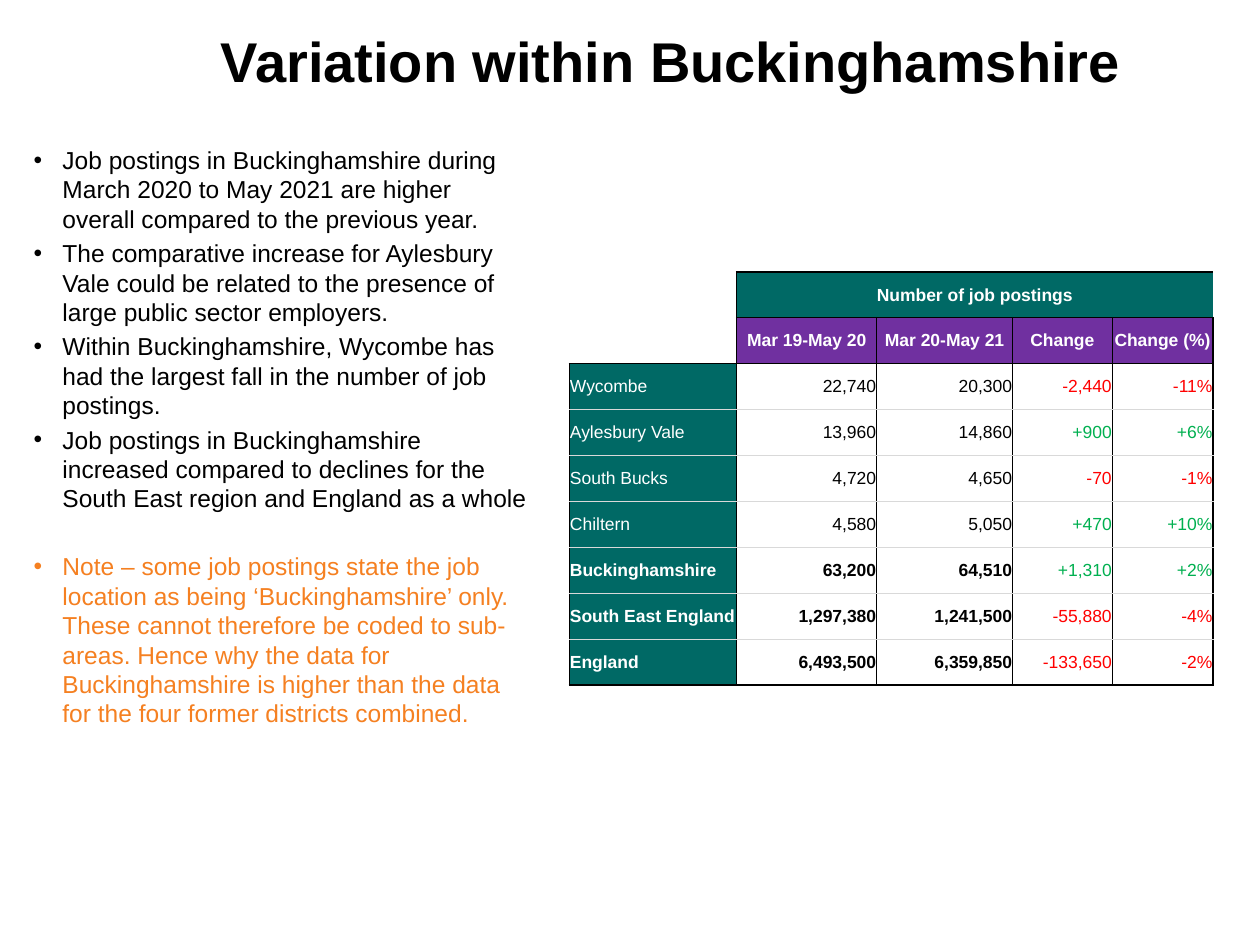
from lxml.etree import SubElement
from pptx import Presentation
from pptx.dml.color import RGBColor
from pptx.enum.text import MSO_ANCHOR, PP_ALIGN
from pptx.oxml.ns import qn
from pptx.util import Cm, Pt

COLORS = {"black": "000000", "white": "FFFFFF", "teal": "006965", "purple": "7030A0",
          "orange": "F58021", "red": "FF0000", "green": "00B050", "grey": "D9D9D9"}


def style_text(p, size, color, bold=False):
    for r in p.runs:
        r.font.name = "Arial"
        r.font.size = Pt(size)
        r.font.bold = bold
        r.font.color.rgb = RGBColor.from_string(COLORS[color])


def set_border(cell, pos, tag, line):
    """Draw one cell side; line is (color, points) or None for no line."""
    color, width = line or (None, 0)
    tcPr = cell._tc.get_or_add_tcPr()
    ln = SubElement(tcPr, qn(f"a:{tag}"), w=str(Pt(width)))
    if line:
        fill = SubElement(ln, qn("a:solidFill"))
        SubElement(fill, qn("a:srgbClr"), val=COLORS[color])
    else:
        SubElement(ln, qn("a:noFill"))
    tcPr.insert(pos, ln)


prs = Presentation()
prs.slide_width, prs.slide_height = Cm(25.4), Cm(19.05)
s = prs.slides.add_slide(prs.slide_layouts[5])

# Title
title = s.shapes.title
title.left, title.top, title.width, title.height = Cm(2.1), Cm(-0.38), Cm(22.86), Cm(3.18)
tf = title.text_frame
tf.text = "Variation within Buckinghamshire"
tf.vertical_anchor = MSO_ANCHOR.MIDDLE
tf.paragraphs[0].alignment = PP_ALIGN.CENTER
style_text(tf.paragraphs[0], 32, "black", True)

# Bulleted findings: text, colour, space before
findings = [
    ("Job postings in Buckinghamshire during March 2020 to May 2021 are higher overall "
     "compared to the previous year.", "black", 0),
    ("The comparative increase for Aylesbury Vale could be related to the presence of "
     "large public sector employers.", "black", 2.8),
    ("Within Buckinghamshire, Wycombe has had the largest fall in the number of job "
     "postings.", "black", 2.8),
    ("Job postings in Buckinghamshire increased compared to declines for the South East "
     "region and England as a whole", "black", 2.8),
    ("Note – some job postings state the job location as being ‘Buckinghamshire’ only. "
     "These cannot therefore be coded to sub-areas. Hence why the data for "
     "Buckinghamshire is higher than the data for the four former districts combined.",
     "orange", 22),
]
tf = s.shapes.add_textbox(Cm(0.43), Cm(2.8), Cm(10.48), Cm(13.08)).text_frame
tf.word_wrap = True
for i, (text, color, gap) in enumerate(findings):
    p = tf.add_paragraph() if i else tf.paragraphs[0]
    p.text = text
    p.line_spacing = Pt(16.8)
    p.space_before = Pt(gap)
    pPr = p._p.get_or_add_pPr()
    pPr.set("marL", str(Cm(0.58)))
    pPr.set("indent", str(-Cm(0.58)))
    SubElement(pPr, qn("a:buFont"), typeface="Arial")
    SubElement(pPr, qn("a:buChar"), char="•")
    style_text(p, 14, color)

# Job postings table
rows = [
    ["", "Number of job postings", "", "", ""],
    ["", "Mar 19-May 20", "Mar 20-May 21", "Change", "Change (%)"],
    ["Wycombe", "22,740", "20,300", "-2,440", "-11%"],
    ["Aylesbury Vale", "13,960", "14,860", "+900", "+6%"],
    ["South Bucks", "4,720", "4,650", "-70", "-1%"],
    ["Chiltern", "4,580", "5,050", "+470", "+10%"],
    ["Buckinghamshire", "63,200", "64,510", "+1,310", "+2%"],
    ["South East England", "1,297,380", "1,241,500", "-55,880", "-4%"],
    ["England", "6,493,500", "6,359,850", "-133,650", "-2%"],
]
widths = [3.37, 2.82, 2.74, 2.01, 2.03]
n_rows, n_cols = len(rows), len(widths)
table = s.shapes.add_table(n_rows, n_cols, Cm(11.48), Cm(5.48),
                           Cm(sum(widths)), Cm(0.92 * n_rows)).table
table.first_row = table.horz_banding = False
for col, width in zip(table.columns, widths):
    col.width = Cm(width)
for row in table.rows:
    row.height = Cm(0.925)
table.cell(0, 1).merge(table.cell(0, n_cols - 1))

thick, thin, light = ("black", 1), ("black", 0.5), ("grey", 0.5)
for i, values in enumerate(rows):
    for j, value in enumerate(values):
        cell = table.cell(i, j)
        header, label = i < 2, j == 0
        corner = header and label

        # Fill
        if corner or not (header or label):
            cell.fill.background()
        else:
            cell.fill.solid()
            fill = "purple" if i == 1 else "teal"
            cell.fill.fore_color.rgb = RGBColor.from_string(COLORS[fill])

        # Text
        cell.margin_left = cell.margin_right = cell.margin_top = Cm(0.01)
        cell.margin_bottom = 0
        cell.vertical_anchor = MSO_ANCHOR.MIDDLE
        p = cell.text_frame.paragraphs[0]
        p.text = value
        p.alignment = (PP_ALIGN.CENTER if header else
                       PP_ALIGN.LEFT if label else PP_ALIGN.RIGHT)
        if header or label:
            color = "white"
        elif j < 3:
            color = "black"
        else:
            color = "red" if value.startswith("-") else "green"
        style_text(p, 10, color, header or (i >= 6 and j < 3))

        # Borders
        inner = None if i == 0 else thin
        left = None if corner else thick if j < 2 else inner
        right = thick if j in (0, n_cols - 1) else inner
        if corner:
            top, bottom = None, thick if i == 1 else None
        else:
            top = thick if i < 2 or (i == 2 and label) else thin if i == 2 else light
            bottom = thick if i in (0, n_rows - 1) else thin if i == 1 else light
        for pos, (tag, line) in enumerate(zip(("lnL", "lnR", "lnT", "lnB"),
                                              (left, right, top, bottom))):
            set_border(cell, pos, tag, line)

prs.save("out.pptx")
